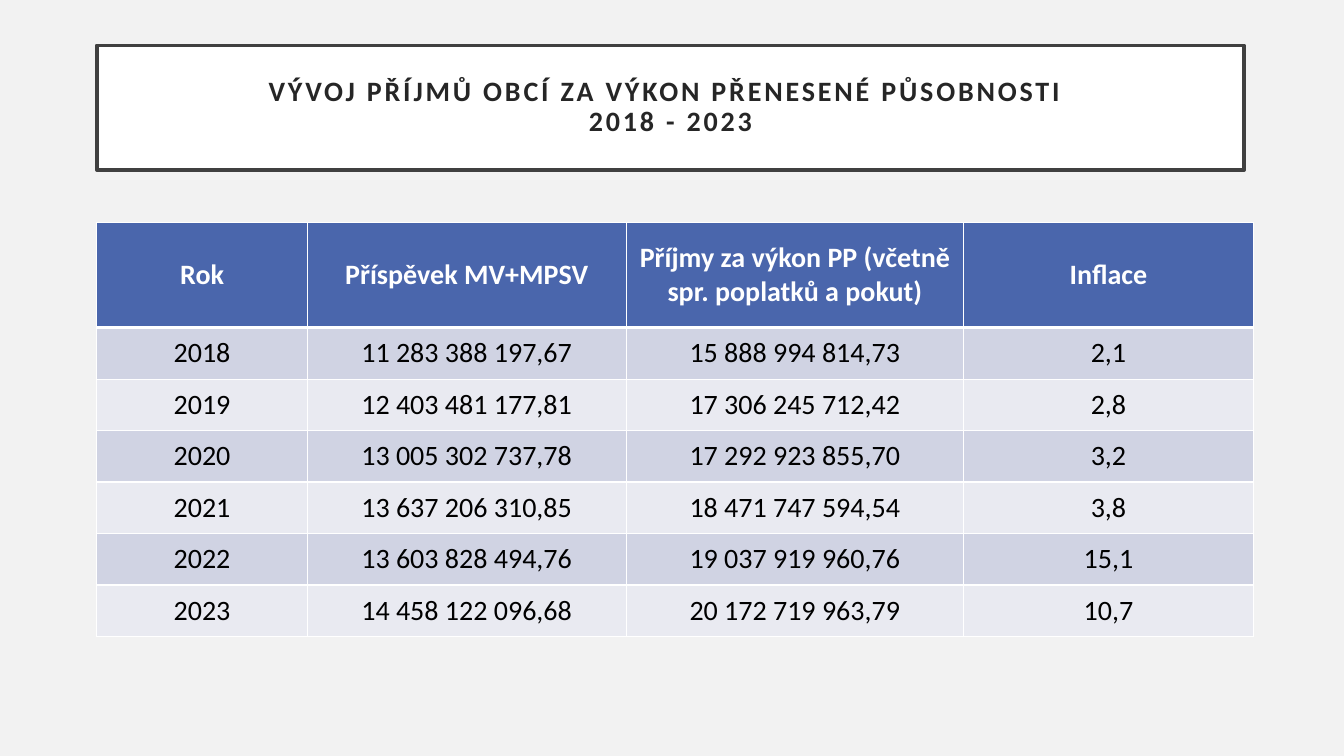
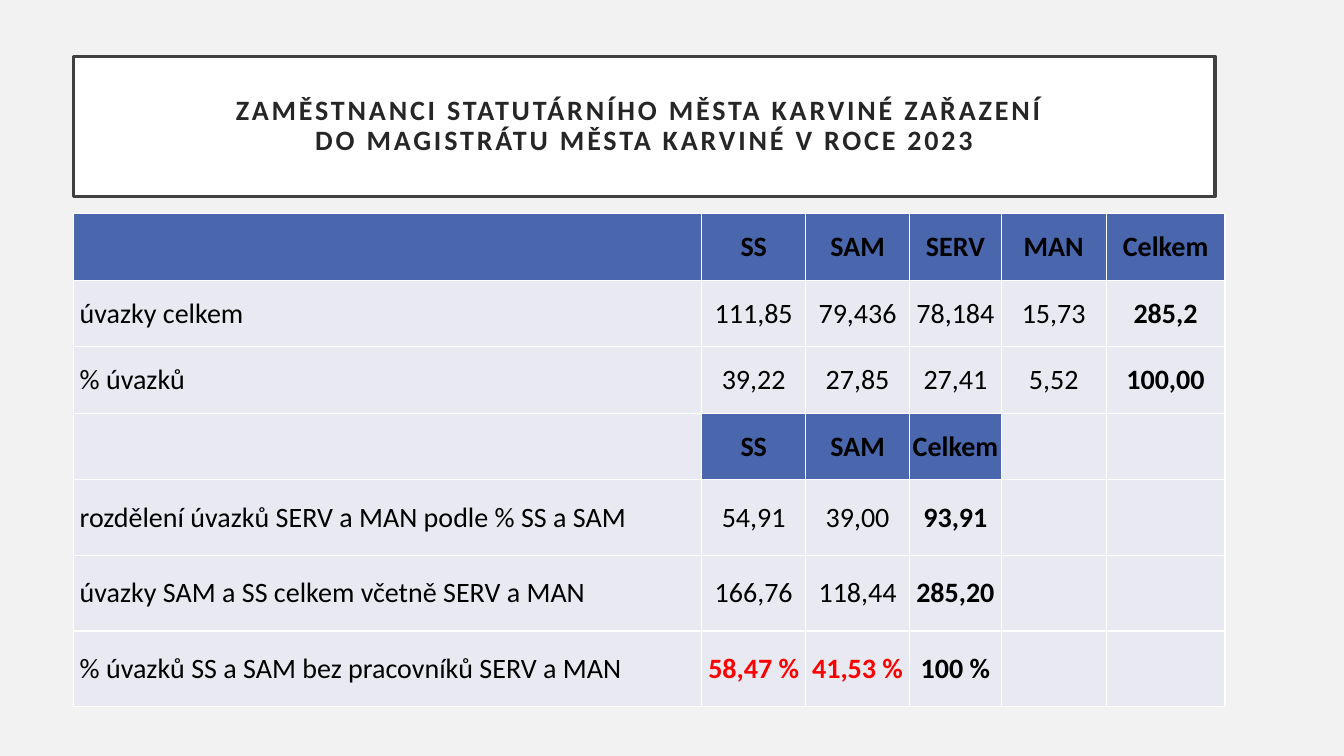
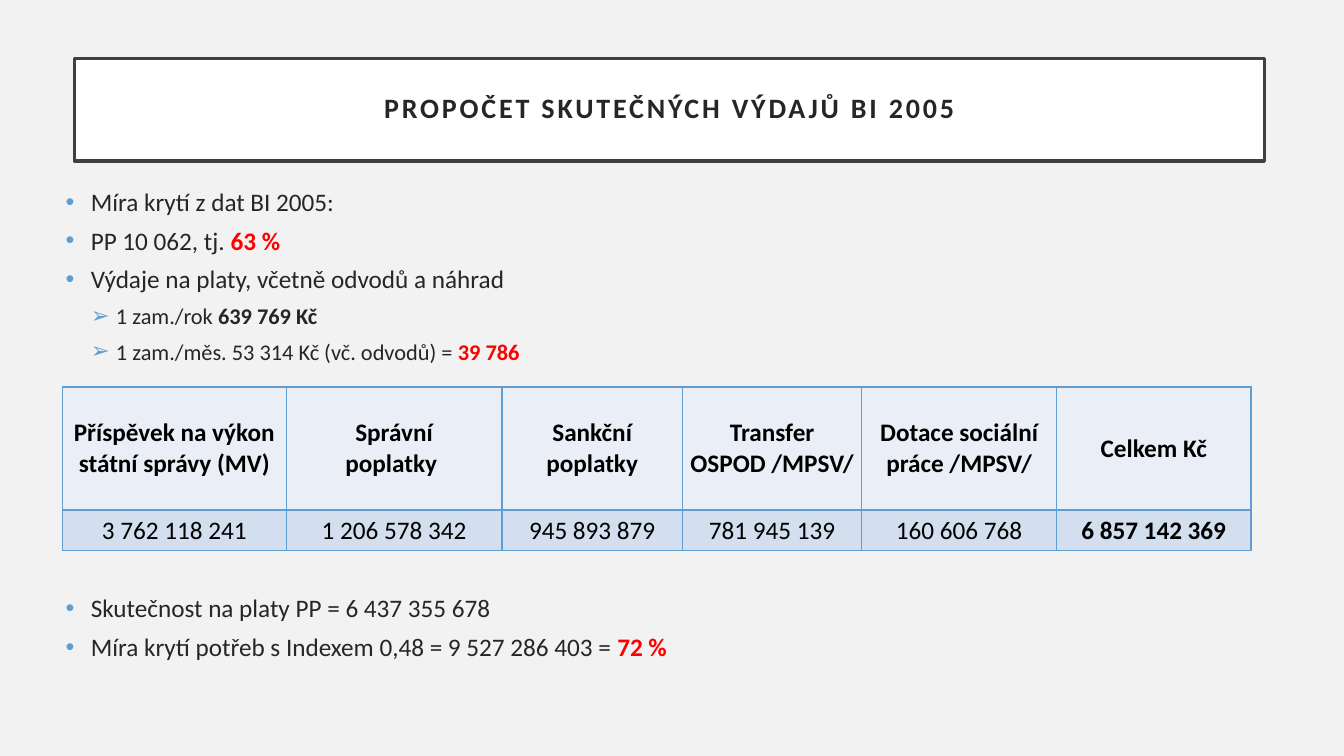
"""Builds three slides on the funding of delegated municipal powers."""
from lxml import etree
from pptx import Presentation
from pptx import util as u
from pptx.dml.color import RGBColor
from pptx.enum import text
from pptx.oxml import parse_xml
from pptx.oxml.ns import nsdecls, qn

COLOR = {
    "page": "F2F2F2", "white": "FFFFFF", "frame": "404040", "ink": "262626",
    "black": "000000", "red": "FF0000", "head": "4A66AC", "band": "D0D3E3",
    "pale": "E9EAF1", "sky": "629DD1", "sky_head": "EAEFF7", "sky_row": "D3DFEE",
}
RGB = {name: RGBColor.from_string(value) for name, value in COLOR.items()}
FONT = "Calibri"
CENTER = text.PP_ALIGN.CENTER
MIDDLE = text.MSO_ANCHOR.MIDDLE
SIDES = ("left", "top", "width", "height")
MARGINS = ("margin_left", "margin_top", "margin_right", "margin_bottom")

prs = Presentation()
prs.slide_width, prs.slide_height = u.Inches(13.33), u.Inches(7.5)
COL, ROW = prs.slide_width / 100, prs.slide_height / 100
prs.slide_master.background.fill.solid()
prs.slide_master.background.fill.fore_color.rgb = RGB["page"]


def add_slide(layout, title, at):
    s = prs.slides.add_slide(prs.slide_layouts[layout])
    sp = s.shapes.title
    for side, n, unit in zip(SIDES, at, (COL, ROW, COL, ROW)):
        setattr(sp, side, int(n * unit))
    sp.fill.solid()
    sp.fill.fore_color.rgb = RGB["white"]
    sp.line.color.rgb = RGB["frame"]
    sp.line.width = u.Pt(2.5)
    tf = sp.text_frame
    tf.text = title
    tf.word_wrap, tf.vertical_anchor = True, MIDDLE
    tf.auto_size = text.MSO_AUTO_SIZE.NONE
    for margin in MARGINS:
        setattr(tf, margin, u.Inches(0.2))
    p = tf.paragraphs[0]
    p.alignment, p.line_spacing = CENTER, 0.9
    for r in p.runs:
        for key, value in {"name": FONT, "size": u.Pt(20), "bold": True}.items():
            setattr(r.font, key, value)
        r.font.color.rgb = RGB["ink"]
        r.font._element.set("spc", "200")
    return s


def add_table(s, at, cols, rows, data, look, size=20, margins=(0, 0, 0, 0),
              border="white", head_line=1):
    """look(row, column) gives fill, text colour and boldness."""
    t = s.shapes.add_table(len(rows), len(cols), int(at[0] * COL), int(at[1] * ROW),
                           int(sum(cols) * COL), int(sum(rows) * ROW)).table
    for column, n in zip(t.columns, cols):
        column.width = int(n * COL)
    for row, n in zip(t.rows, rows):
        row.height = int(n * ROW)
    for i, values in enumerate(data):
        for j, value in enumerate(values):
            cell = t.cell(i, j)
            fill, color, bold = look(i, j)
            for side in "LRTB":
                thick = (i, side) in ((0, "B"), (1, "T"))
                width = u.Pt(head_line if thick else 1)
                cell._tc.get_or_add_tcPr().append(parse_xml(
                    f'<a:ln{side} {nsdecls("a")} w="{width}"><a:solidFill>'
                    f'<a:srgbClr val="{COLOR[border]}"/></a:solidFill></a:ln{side}>'))
            cell.fill.solid()
            cell.fill.fore_color.rgb = RGB[fill]
            cell.vertical_anchor = MIDDLE
            for margin, n in zip(MARGINS, margins):
                setattr(cell, margin, u.Inches(n))
            cell.text = value
            for p in cell.text_frame.paragraphs:
                p.alignment = CENTER
                for r in p.runs:
                    for key, v in {"name": FONT, "size": u.Pt(size), "bold": bold}.items():
                        setattr(r.font, key, v)
                    r.font.color.rgb = RGB[color]
    return t


s = add_slide(5, "VÝVOJ PŘÍJMŮ OBCÍ ZA VÝKON PŘENESENÉ PŮSOBNOSTI \v2018 - 2023",
              (7.2, 6, 85.37, 16.5))
income = [
    ("Rok", "Příspěvek MV+MPSV", "Příjmy za výkon PP (včetně spr. poplatků a pokut)", "Inflace"),
    ("2018", "11 283 388 197,67", "15 888 994 814,73", "2,1"),
    ("2019", "12 403 481 177,81", "17 306 245 712,42", "2,8"),
    ("2020", "13 005 302 737,78", "17 292 923 855,70", "3,2"),
    ("2021", "13 637 206 310,85", "18 471 747 594,54", "3,8"),
    ("2022", "13 603 828 494,76", "19 037 919 960,76", "15,1"),
    ("2023", "14 458 122 096,68", "20 172 719 963,79", "10,7"),
]
add_table(s, (7.2, 29.47), (15.68, 23.71, 25.13, 21.53), [13.87] + [6.81] * 6, income,
          lambda i, j: ("head", "white", True) if i == 0
          else (("pale", "band")[i % 2], "black", False),
          margins=(0.1, 0.05, 0.1, 0.05), head_line=3)

s = add_slide(5, "ZAMĚSTNANCI STATUTÁRNÍHO MĚSTA KARVINÉ ZAŘAZENÍ \v"
              "DO MAGISTRÁTU MĚSTA KARVINÉ V ROCE 2023", (5.48, 7.47, 84.92, 18.53))
staff = [
    ("", "SS", "SAM", "SERV", "MAN", "Celkem"),
    ("úvazky celkem", "111,85", "79,436", "78,184", "15,73", "285,2"),
    ("% úvazků", "39,22", "27,85", "27,41", "5,52", "100,00"),
    ("", "SS", "SAM", "Celkem", "", ""),
    ("rozdělení úvazků SERV a MAN podle % SS a SAM", "54,91", "39,00", "93,91", "", ""),
    ("úvazky SAM a SS celkem včetně SERV a MAN", "166,76", "118,44", "285,20", "", ""),
    ("% úvazků SS a SAM bez pracovníků SERV a MAN", "58,47 %", "41,53 %", "100 %", "", ""),
]
t = add_table(s, (5.48, 28.27), (46.74, 7.73, 7.73, 6.83, 7.8, 8.85),
              [8.8] * 4 + [10] * 3, staff,
              lambda i, j: ("head" if i == 0 or (i == 3 and 1 <= j <= 3) else "pale",
                            "red" if i == 6 and j in (1, 2) else "black",
                            i in (0, 3) or j == (5 if i < 3 else 3) or (i == 6 and j > 0)))
for i in range(len(staff)):
    cell = t.cell(i, 0)
    cell.margin_left = u.Inches(0.06)
    cell.text_frame.paragraphs[0].alignment = text.PP_ALIGN.LEFT

s = add_slide(1, "PROPOČET SKUTEČNÝCH VÝDAJŮ BI 2005", (5.55, 7.73, 88.52, 13.6))
body = s.placeholders[1]
for side, n, unit in zip(SIDES, (4.13, 24, 89.05, 70.93), (COL, ROW, COL, ROW)):
    setattr(body, side, int(n * unit))
tf = body.text_frame
tf.auto_size = text.MSO_AUTO_SIZE.NONE
points = [
    (0, 6, "Míra krytí z dat BI 2005:", "", "ink"),
    (0, 6, "PP 10 062, tj. ", "63 %", "red"),
    (0, 6, "Výdaje na platy, včetně odvodů a náhrad", "", "ink"),
    (1, 6, "1 zam./rok ", "639 769 Kč", "ink"),
    (1, 6, "1 zam./měs. 53 314 Kč (vč. odvodů) = ", "39 786", "red"),
    (0, 163, "Skutečnost na platy PP = 6 437 355 678", "", "ink"),
    (0, 6, "Míra krytí potřeb s Indexem 0,48 = 9 527 286 403 = ", "72 %", "red"),
]
for n, (level, gap, plain, strong, accent) in enumerate(points):
    p = tf.add_paragraph() if n else tf.paragraphs[0]
    p.level, p.space_before = level, u.Pt(gap)
    pPr = p._p.get_or_add_pPr()
    pPr.set("marL", str(u.Inches(0.25 * (level + 1))))
    pPr.set("indent", str(-u.Inches(0.25)))
    tint = etree.SubElement(pPr, qn("a:buClr"))
    etree.SubElement(tint, qn("a:srgbClr")).set("val", COLOR["sky"])
    etree.SubElement(pPr, qn("a:buChar")).set("char", "•➢"[level])
    for words, color, bold in ((plain, "ink", False), (strong, accent, True)):
        if words:
            r = p.add_run()
            r.text = words
            for key, v in {"name": FONT, "size": u.Pt(18 - 2 * level), "bold": bold}.items():
                setattr(r.font, key, v)
            r.font.color.rgb = RGB[color]

sources = [
    ("Příspěvek na výkon státní správy (MV)", "Správní\npoplatky ", "Sankční poplatky",
     "Transfer OSPOD /MPSV/", "Dotace sociální práce /MPSV/", "Celkem Kč"),
    ("3 762 118 241", "1 206 578 342", "945 893 879",
     "781 945 139", "160 606 768", "6 857 142 369"),
]
add_table(s, (4.65, 51.2), (16.65, 16.05, 13.43, 13.35, 14.48, 14.48), (16.27, 5.4), sources,
          lambda i, j: (("sky_head", "sky_row")[i], "black", i == 0 or j == 5),
          size=18, margins=(0.07, 0, 0.07, 0), border="sky")

prs.save("out.pptx")
